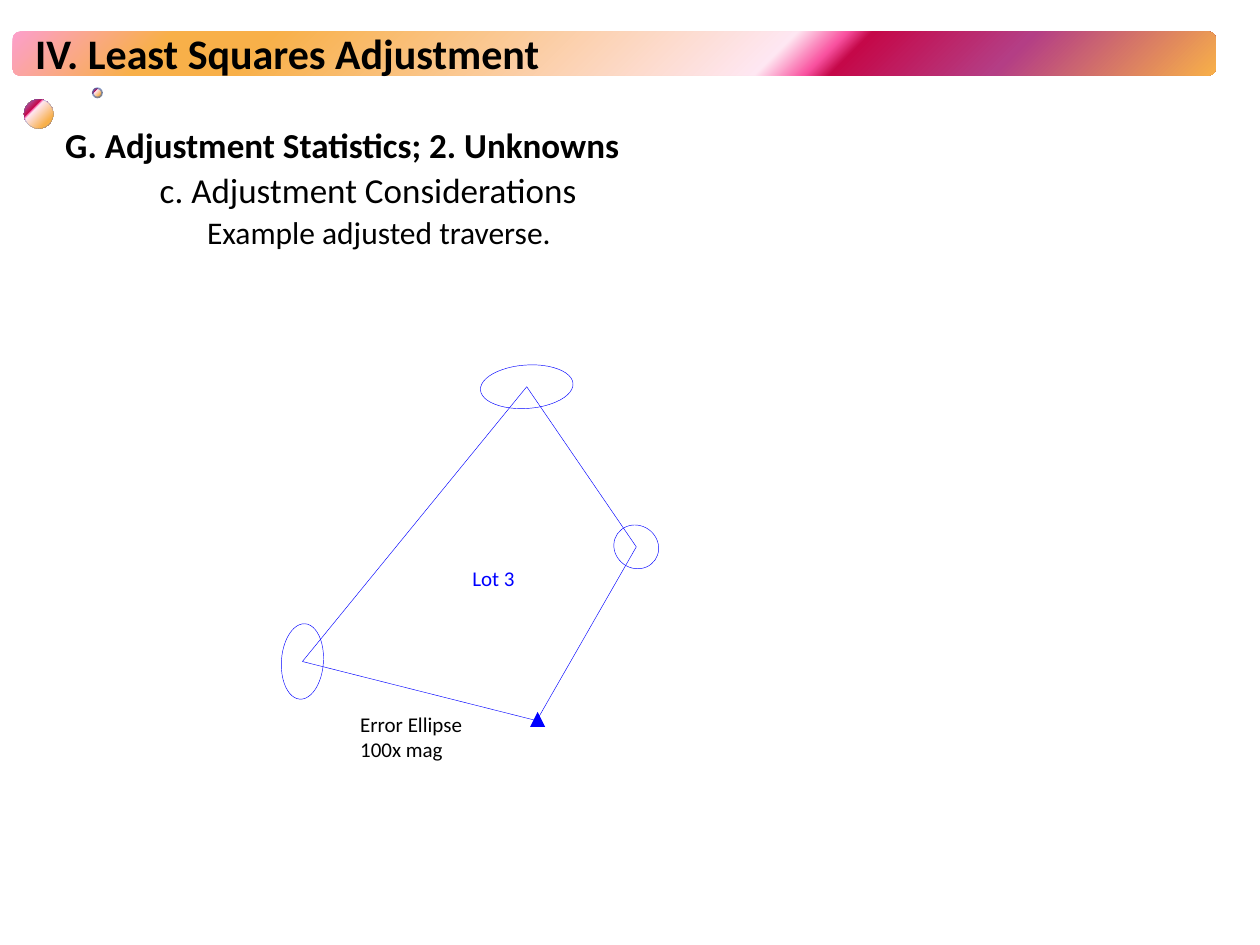
from lxml import etree
from pptx import Presentation
from pptx.dml.color import RGBColor
from pptx.enum.shapes import MSO_CONNECTOR as LINE, MSO_SHAPE as SHAPE
from pptx.enum.text import MSO_AUTO_SIZE as AUTO
from pptx.oxml import parse_xml
from pptx.oxml.ns import nsdecls, qn
from pptx.util import Pt

COLORS = {"black": "000000", "blue": "0000FF", "rim": "3B6BC1", "dot rim": "3C65AD"}
STOPS = {0: "FC9FCB", 13: "F8B049", 21: "F8B049", 63: "FEE7F2",
         67: "F952A0", 69: "C50849", 82: "B43E85", 100: "F8B049"}
LINEAR = '<a:lin ang="2700000" scaled="0"/>'
RADIAL = '<a:path path="circle"><a:fillToRect l="100000" t="100000"/></a:path>'

prs = Presentation()
prs.slide_width, prs.slide_height = Pt(720), Pt(540)
s = prs.slides.add_slide(prs.slide_layouts[6])


def add_shape(kind, box, fill=None, line=None, width=0.25):
    sp = s.shapes.add_shape(kind, *map(Pt, box))
    sp.shadow.inherit = False
    if fill:
        sp.fill.solid()
        sp.fill.fore_color.rgb = RGBColor.from_string(COLORS[fill])
    else:
        sp.fill.background()
    if line:
        sp.line.color.rgb = RGBColor.from_string(COLORS[line])
        sp.line.width = Pt(width)
    else:
        sp.line.fill.background()
    return sp


def add_text(box, paragraphs, color="black", wrap=True, auto=AUTO.SHAPE_TO_FIT_TEXT):
    """Add a text box; each paragraph is (text, font formats, paragraph formats, left indent)."""
    tf = s.shapes.add_textbox(*map(Pt, box)).text_frame
    tf.word_wrap, tf.auto_size = wrap, auto
    for i, (text, font, layout, indent) in enumerate(paragraphs):
        p = tf.add_paragraph() if i else tf.paragraphs[0]
        for name, value in layout.items():
            setattr(p, name, value)
        if indent:
            p._p.get_or_add_pPr().set("marL", str(Pt(indent)))
        r = p.add_run()
        r.text = text
        for name, value in {"name": "Calibri", **font}.items():
            setattr(r.font, name, value)
        r.font.color.rgb = RGBColor.from_string(COLORS[color])


# Banner and its two beads
stops = "".join(f'<a:gs pos="{pos * 1000}"><a:srgbClr val="{color}"/></a:gs>'
                for pos, color in STOPS.items())
for kind, box, direction, rim, width in [
    (SHAPE.ROUNDED_RECTANGLE, (7.2, 18, 687.6, 25.2), LINEAR, None, 0),
    (SHAPE.OVAL, (13.7, 56.7, 16.8, 16.8), RADIAL, "rim", 0.16),
    (SHAPE.OVAL, (53, 50.4, 5.3, 5.3), RADIAL, "dot rim", 1),
]:
    sp = add_shape(kind, box, line=rim, width=width)
    no_fill = sp._element.spPr.find(qn("a:noFill"))
    no_fill.getparent().replace(no_fill, parse_xml(
        f'<a:gradFill {nsdecls("a")} rotWithShape="1"><a:gsLst>{stops}</a:gsLst>{direction}</a:gradFill>'))
    if rim:
        rgb = sp.line._ln.find(".//" + qn("a:srgbClr"))
        etree.SubElement(rgb, qn("a:alpha")).set("val", "60000")

# Title and outline
add_text((13, 12.2, 525, 36),
         [("IV. Least Squares Adjustment", {"size": Pt(24), "bold": True}, {}, 0)])
add_text((30.2, 69.8, 620.6, 422), [
    (text, {"size": Pt(size), "bold": bold},
     {"level": level, "line_spacing": 0.9, "space_before": Pt(before)}, indent)
    for text, size, bold, level, before, indent in [
        ("G. Adjustment Statistics; 2. Unknowns", 20, True, 0, 7.5, 0),
        ("c. Adjustment Considerations", 20, False, 2, 3.8, 54),
        ("Example adjusted traverse.", 18, False, 3, 3.8, 81),
    ]], auto=AUTO.NONE)

# Traverse legs, running round the lot
corners = [(306.7, 411.8), (363.6, 312.5), (301, 221), (172.8, 378)]
for start, end in zip(corners, corners[1:] + corners[:1]):
    leg = s.shapes.add_connector(LINE.STRAIGHT, *map(Pt, start + end))
    leg.line.color.rgb = RGBColor.from_string(COLORS["blue"])
    leg.line.width = Pt(0.25)
    etree.SubElement(leg._element.spPr, qn("a:effectLst"))

# Error ellipses, centred on the adjusted corners
for (x, y), (w, h), angle in zip(corners[1:], [(26.2, 24.4), (53, 24.8), (24, 43.2)], [35, -4, 4]):
    add_shape(SHAPE.OVAL, (x - w / 2, y - h / 2, w, h), line="blue").rotation = angle

# Control point and labels
add_shape(SHAPE.ISOSCELES_TRIANGLE, (302.9, 406.8, 8.6, 8.6), fill="blue")
label = {"size": Pt(12)}
add_text((262.8, 319.7, 38.9, 21.6), [("Lot 3", label, {}, 0)], color="blue", wrap=False)
add_text((198.7, 403.2, 75.6, 36),
         [(text, label, {}, 0) for text in ("Error Ellipse", "100x mag")], wrap=False)

prs.save("out.pptx")
